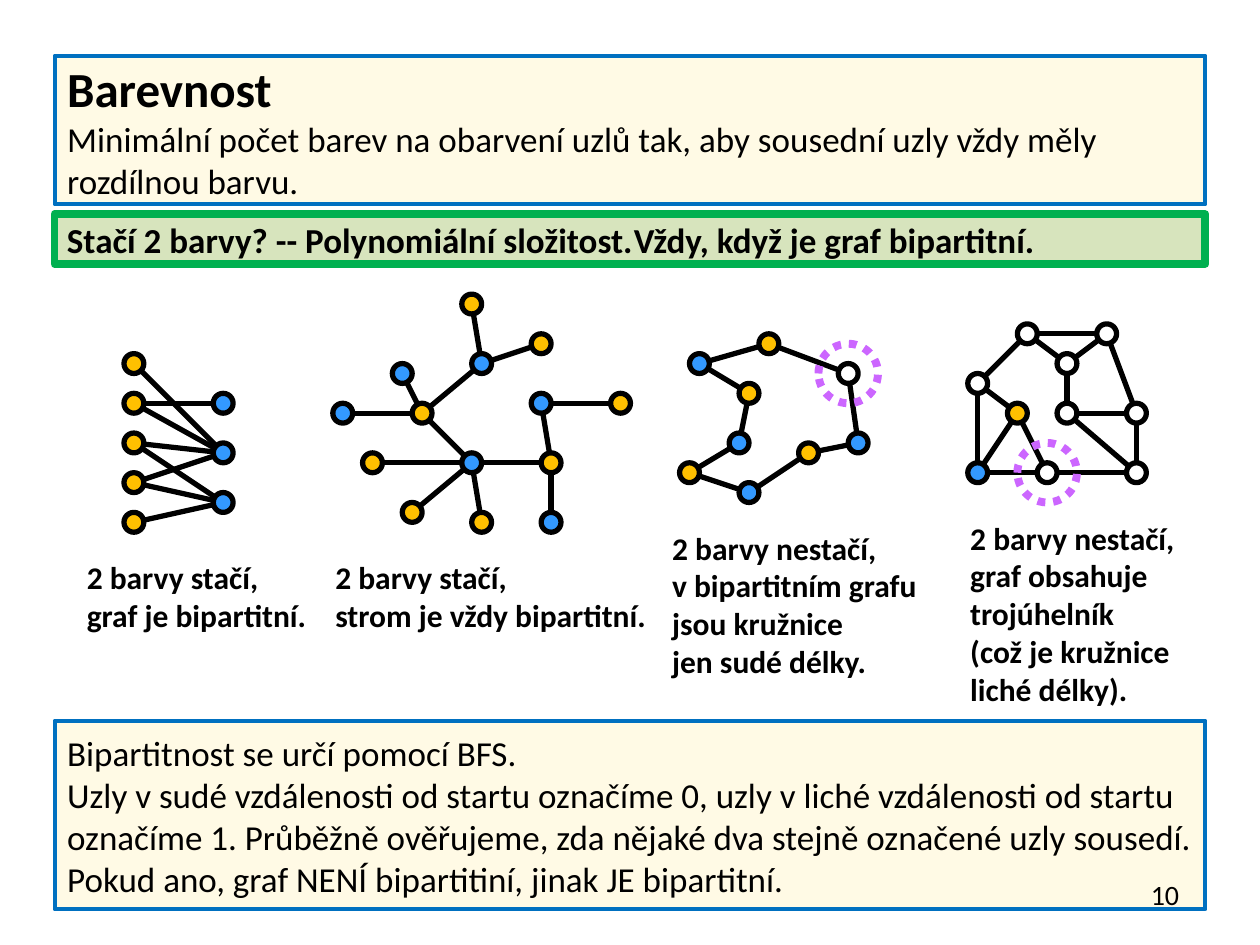
from lxml.etree import SubElement
from pptx import Presentation
from pptx.dml.color import RGBColor as Rgb
from pptx.enum.dml import MSO_LINE as Dash
from pptx.enum.shapes import MSO_CONNECTOR as Link, MSO_SHAPE as Kind
from pptx.enum.text import MSO_ANCHOR as Anchor, MSO_AUTO_SIZE as Fit, PP_ALIGN as Align
from pptx.oxml.ns import qn
from pptx.util import Cm, Pt

HUES = {"ink": "000000", "cream": "FFFAE5", "rim": "0070C0", "sage": "D7E4BD",
        "green": "00B050", "gold": "FFC000", "blue": "3399FF", "white": "FFFFFF",
        "ring": "CC66FF"}
STEP = 0.2
NODE, RING = 2, 6
LEFT, WIDE = 1.1, 23.2

PAIRS = {
    "box": (2.7, 7.33, 1.8, 3.2),
    "gold": [(0, 0), (0, 4), (0, 8), (0, 12), (0, 16)],
    "blue": [(9, 4), (9, 9), (9, 14)],
    "edges": [(0, 6), (1, 5), (1, 6), (2, 6), (2, 7), (3, 6), (3, 7), (4, 7)],
    "note": (-1.2, 3.8, 5.13, 1.8),
    "text": ["2 barvy stačí,", "graf je bipartitní."],
}
TREE = {
    "box": (6.91, 6.13, 5.6, 4.4),
    "gold": [(13, 0), (20, 4), (8, 11), (3, 16), (7, 21), (14, 22), (21, 16), (28, 10)],
    "blue": [(14, 6), (6, 7), (0, 11), (13, 16), (20, 10), (21, 22)],
    "edges": [(0, 8), (8, 1), (8, 2), (9, 2), (10, 2), (2, 11), (3, 11), (4, 11),
              (5, 11), (11, 6), (6, 12), (12, 7), (6, 13)],
    "note": (-0.4, 5, 6.83, 1.8),
    "text": ["2 barvy stačí,", "strom je vždy bipartitní."],
}
CYCLE = {
    "box": (13.9, 6.93, 3.4, 3),
    "gold": [(6, 5), (12, 11), (0, 13), (8, 0)],
    "blue": [(1, 2), (5, 10), (6, 15), (17, 10)],
    "white": [(16, 3)],
    "edges": [(8, 3), (3, 4), (4, 0), (0, 5), (5, 2), (2, 6), (6, 1), (1, 7), (7, 8)],
    "ring": (16, 3),
    "note": (-0.6, 3.6, 5.49, 3.33),
    "text": ["2 barvy nestačí,", "v bipartitním grafu", "jsou kružnice", "jen sudé délky."],
}
MESH = {
    "box": (19.71, 6.73, 3.2, 2.8),
    "gold": [(4, 8)],
    "blue": [(0, 14)],
    "white": [(0, 5), (5, 0), (13, 0), (9, 3), (9, 8), (16, 8), (16, 14), (7, 14)],
    "edges": [(0, 1), (0, 2), (0, 9), (1, 2), (1, 9), (2, 3), (3, 4), (3, 5), (4, 5),
              (4, 7), (5, 6), (6, 7), (6, 8), (7, 8), (8, 9)],
    "ring": (7, 14),
    "note": (-0.4, 3.6, 4.67, 4.11),
    "text": ["2 barvy nestačí,", "graf obsahuje", "trojúhelník", "(což je kružnice",
             "liché délky)."],
}


def tint(name):
    """Return the named colour."""
    return Rgb.from_string(HUES[name])


def place(shape, box):
    """Move a shape to a box given in centimetres."""
    shape.left, shape.top, shape.width, shape.height = map(Cm, box)


def paint(shape, fill, line, width):
    """Set the fill and outline of a shape."""
    if fill:
        shape.fill.solid()
        shape.fill.fore_color.rgb = tint(fill)
    else:
        shape.fill.background()
    shape.line.color.rgb = tint(line)
    shape.line.width = Pt(width)


def write(frame, lines, align=Align.LEFT, tab=None):
    """Fill a frame with paragraphs of (text, size, bold)."""
    for i, (text, size, bold) in enumerate(lines):
        para = frame.paragraphs[0] if i == 0 else frame.add_paragraph()
        para.alignment = align
        para.space_before = Pt(0)
        props = para._p.get_or_add_pPr()
        props.set("marL", "0")
        props.set("indent", "0")
        SubElement(props, qn("a:buNone"))
        if tab:
            stops = SubElement(props, qn("a:tabLst"))
            SubElement(stops, qn("a:tab"), pos=str(Cm(tab)), algn="l")
        run = para.add_run()
        run.text = text
        font = run.font
        font.name, font.size, font.bold = "Calibri", Pt(size), bold
        font.color.rgb = tint("ink")


def panel(shape, box, look, lines, tab=None):
    """Turn a shape into a framed text panel."""
    place(shape, box)
    paint(shape, *look)
    frame = shape.text_frame
    frame.word_wrap = True
    frame.auto_size = Fit.NONE
    frame.vertical_anchor = Anchor.MIDDLE
    write(frame, lines, tab=tab)


def banner(slide, box):
    """Add the green statement bar."""
    bar = slide.shapes.add_shape(Kind.RECTANGLE, *map(Cm, box))
    bar.shadow.inherit = False
    text = "Stačí 2 barvy? -- Polynomiální složitost.\tVždy, když je graf bipartitní."
    panel(bar, box, ("sage", "green", 4.5), [(text, 20, True)], tab=11.9)


def disc(shapes, spot, size, fill, line, width):
    """Add a circle centred on a spot, sized in grid steps."""
    x, y = spot
    side = Cm(size * STEP)
    oval = shapes.add_shape(Kind.OVAL, Cm(x) - side // 2, Cm(y) - side // 2, side, side)
    oval.shadow.inherit = False
    paint(oval, fill, line, width)
    return oval


def graph(slide, plan):
    """Draw one graph with its caption in the box of its plan."""
    left, top, _, _ = plan["box"]
    shapes = slide.shapes.add_group_shape().shapes

    def spot(point):
        """Map a grid point to the slide."""
        return left + point[0] * STEP, top + point[1] * STEP

    nodes = [(spot(p), hue) for hue in ("gold", "blue", "white") for p in plan.get(hue, [])]
    for a, b in plan["edges"]:
        ends = map(Cm, nodes[a][0] + nodes[b][0])
        edge = shapes.add_connector(Link.STRAIGHT, *ends)
        edge.line.color.rgb = tint("ink")
        edge.line.width = Pt(3)
        SubElement(edge._element.spPr, qn("a:effectLst"))
    for centre, hue in nodes:
        disc(shapes, centre, NODE, hue, "ink", 3)
    if "ring" in plan:
        ring = disc(shapes, spot(plan["ring"]), RING, None, "ring", 4.5)
        ring.line.dash_style = Dash.ROUND_DOT
    dx, dy, wide, high = plan["note"]
    note = shapes.add_textbox(*map(Cm, (left + dx, top + dy, wide, high))).text_frame
    note.word_wrap = False
    note.auto_size = Fit.SHAPE_TO_FIT_TEXT
    write(note, [(line, 18, True) for line in plan["text"]])


def number(slide, box):
    """Add the page number."""
    frame = slide.shapes.add_textbox(*map(Cm, box)).text_frame
    frame.word_wrap = True
    frame.vertical_anchor = Anchor.MIDDLE
    write(frame, [("10", 16, False)], Align.RIGHT)


def main():
    """Build the slide and save it."""
    deck = Presentation()
    deck.slide_width, deck.slide_height = Cm(25.4), Cm(19.05)
    slide = deck.slides.add_slide(deck.slide_layouts[1])
    look = ("cream", "rim", 2.25)
    panel(slide.shapes.title, (LEFT, 1.12, WIDE, 3), look, [
        ("Barevnost", 28, True),
        ("Minimální počet barev na obarvení uzlů tak, aby sousední uzly vždy měly "
         "rozdílnou barvu.", 20, False)])
    panel(slide.placeholders[1], (LEFT, 14.53, WIDE, 3.8), look, [
        ("Bipartitnost se určí pomocí BFS.", 20, False),
        ("Uzly v sudé vzdálenosti od startu označíme 0, uzly v liché vzdálenosti od "
         "startu označíme 1. Průběžně ověřujeme, zda nějaké dva stejně označené uzly "
         "sousedí. Pokud ano, graf NENÍ bipartitiní, jinak JE bipartitní.", 20, False)])
    banner(slide, (LEFT, 4.32, WIDE, 1))
    for plan in (PAIRS, TREE, CYCLE, MESH):
        graph(slide, plan)
    number(slide, (18.1, 17.52, 5.92, 1.02))
    deck.save("out.pptx")


if __name__ == "__main__":
    main()
